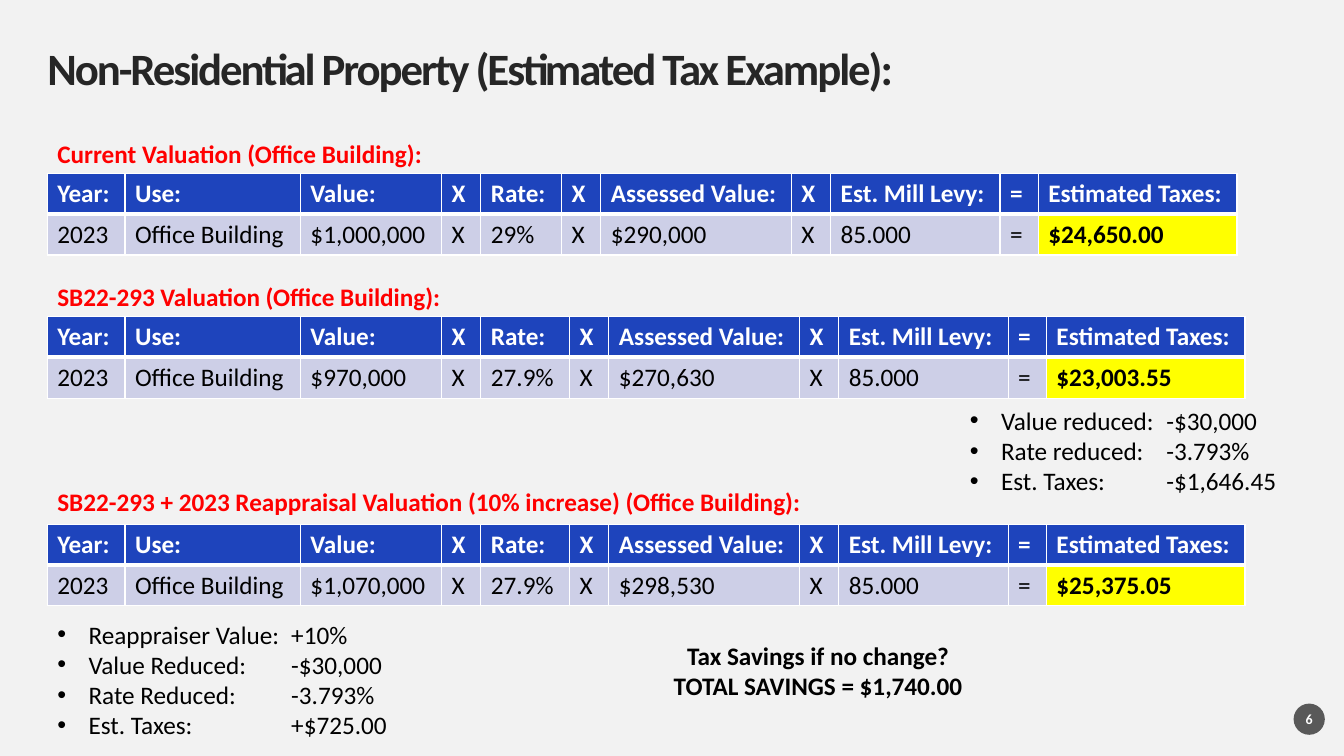
from lxml.etree import SubElement
from pptx import Presentation
from pptx.dml.color import RGBColor
from pptx.enum.shapes import MSO_SHAPE
from pptx.enum.text import MSO_ANCHOR, PP_ALIGN
from pptx.oxml.ns import qn
from pptx.util import Inches, Pt

COLORS = {
    "background": "F2F2F2", "title": "262626", "heading": "FF0000",
    "header": "1E44BC", "body": "CDCFE7", "result": "FFFF00",
    "badge": "595959", "white": "FFFFFF", "black": "000000",
}
FONT = "Calibri"
LEFT = 0.47
ROW_HEIGHT = 0.405
INDENT = 0.31

TITLE = "Non-Residential Property (Estimated Tax Example):"
PAGE_NUMBER = "6"
HEADER = ["Year:", "Use:", "Value:", "X", "Rate:", "X", "Assessed Value:", "X",
          "Est. Mill Levy:", "=", "Estimated Taxes:"]
COLUMN_WIDTHS = [0.77, 1.74, 1.4, 0.39, 0.88, 0.39, 1.89, 0.39, 1.68, 0.38, 1.97]
RATE_COLUMN = HEADER.index("Rate:")

# heading, heading top, heading width, table top, rate column width, value, rate, assessed, taxes
VALUATIONS = [
    ("Current Valuation (Office Building):", 1.32, 4.36, 1.72, 0.8,
     "$1,000,000", "29%", "$290,000", "$24,650.00"),
    ("SB22-293 Valuation (Office Building):", 2.74, 4.36, 3.14, 0.88,
     "$970,000", "27.9%", "$270,630", "$23,003.55"),
    ("SB22-293 + 2023 Reappraisal Valuation (10% increase) (Office Building):",
     4.78, 7.98, 5.2, 0.88,
     "$1,070,000", "27.9%", "$298,530", "$25,375.05"),
]

# left, top, width, height, tab position, (label, change) pairs
CHANGES = [
    (9.52, 3.97, 3.81, 1.01, 1.95, [
        ("Value reduced:", "-$30,000"),
        ("Rate reduced:", "-3.793%"),
        ("Est. Taxes:", "-$1,646.45")]),
    (LEFT, 6.09, 3.81, 1.31, 2.32, [
        ("Reappraiser Value:", "+10%"),
        ("Value Reduced:", "-$30,000"),
        ("Rate Reduced:", "-3.793%"),
        ("Est. Taxes:", "+$725.00")]),
]
SAVINGS = ["Tax Savings if no change?", "TOTAL SAVINGS = $1,740.00"]


def rgb(name):
    return RGBColor.from_string(COLORS[name])


def format_text(frame, color, size=18, bold=False, align=PP_ALIGN.LEFT):
    for paragraph in frame.paragraphs:
        paragraph.alignment = align
        for run in paragraph.runs:
            run.font.name = FONT
            run.font.size = Pt(size)
            run.font.bold = bold
            run.font.color.rgb = rgb(color)


def remove_margins(frame):
    frame.margin_left = frame.margin_right = 0
    frame.margin_top = frame.margin_bottom = 0
    frame.vertical_anchor = MSO_ANCHOR.MIDDLE


def add_text(slide, box, lines, color, **style):
    frame = slide.shapes.add_textbox(*map(Inches, box)).text_frame
    frame.word_wrap = True
    frame.text = "\n".join(lines)
    format_text(frame, color, **style)
    return frame


def add_bullet(paragraph, tab):
    """Give the paragraph a hanging bullet and one tab stop, in inches."""
    properties = paragraph._p.get_or_add_pPr()
    properties.set("marL", str(Inches(INDENT)))
    properties.set("indent", str(-Inches(INDENT)))
    SubElement(properties, qn("a:buFont"), typeface="Arial")
    SubElement(properties, qn("a:buChar"), char="•")
    tabs = SubElement(properties, qn("a:tabLst"))
    SubElement(tabs, qn("a:tab"), pos=str(Inches(tab)), algn="l")


def add_borders(cell, **widths):
    properties = cell._tc.get_or_add_tcPr()
    for side in "LRTB":
        line = SubElement(properties, qn(f"a:ln{side}"), w=str(Pt(widths.get(side, 1))))
        fill = SubElement(line, qn("a:solidFill"))
        SubElement(fill, qn("a:srgbClr"), val=COLORS["white"])


def add_valuation_table(slide, top, rate_width, values):
    widths = list(COLUMN_WIDTHS)
    widths[RATE_COLUMN] = rate_width
    rows = [HEADER, values]
    table = slide.shapes.add_table(
        len(rows), len(widths), Inches(LEFT), Inches(top),
        Inches(sum(widths)), Inches(ROW_HEIGHT * len(rows))).table
    for column, width in zip(table.columns, widths):
        column.width = Inches(width)
    for r, row in enumerate(rows):
        table.rows[r].height = Inches(ROW_HEIGHT)
        for c, text in enumerate(row):
            is_header = r == 0
            is_result = not is_header and c == len(row) - 1
            cell = table.cell(r, c)
            cell.text = text
            format_text(cell.text_frame, "white" if is_header else "black",
                        bold=is_header or is_result)
            add_borders(cell, **({"B": 3} if is_header else {"T": 3}))
            cell.fill.solid()
            cell.fill.fore_color.rgb = rgb(
                "header" if is_header else "result" if is_result else "body")


def add_page_badge(slide):
    badge = slide.shapes.add_shape(
        MSO_SHAPE.OVAL, Inches(12.83), Inches(6.98), Inches(0.31), Inches(0.31))
    badge.shadow.inherit = False
    badge.fill.solid()
    badge.fill.fore_color.rgb = rgb("badge")
    badge.line.fill.background()
    badge.text_frame.text = PAGE_NUMBER
    remove_margins(badge.text_frame)
    format_text(badge.text_frame, "white", size=10, bold=True, align=PP_ALIGN.CENTER)


def main():
    deck = Presentation()
    deck.slide_width, deck.slide_height = Inches(13.33), Inches(7.5)
    slide = deck.slides.add_slide(deck.slide_layouts[6])
    slide.background.fill.solid()
    slide.background.fill.fore_color.rgb = rgb("background")

    title = add_text(slide, (LEFT, 0.47, 12.39, 0.47), [TITLE], "title", size=32, bold=True)
    remove_margins(title)
    title.paragraphs[0].line_spacing = 0.9
    title.paragraphs[0].runs[0].font._element.set("spc", "-150")

    for heading, top, width, table_top, rate_width, value, rate, assessed, taxes in VALUATIONS:
        add_text(slide, (LEFT, top, width, 0.4), [heading], "heading", bold=True)
        add_valuation_table(slide, table_top, rate_width, [
            "2023", "Office Building", value, "X", rate, "X", assessed, "X",
            "85.000", "=", taxes])

    for *box, tab, changes in CHANGES:
        frame = add_text(slide, box, ["\t".join(pair) for pair in changes], "black")
        for paragraph in frame.paragraphs:
            add_bullet(paragraph, tab)

    add_text(slide, (6.03, 6.3, 4.17, 0.71), SAVINGS, "black",
             bold=True, align=PP_ALIGN.CENTER)
    add_page_badge(slide)
    deck.save("out.pptx")


if __name__ == "__main__":
    main()
